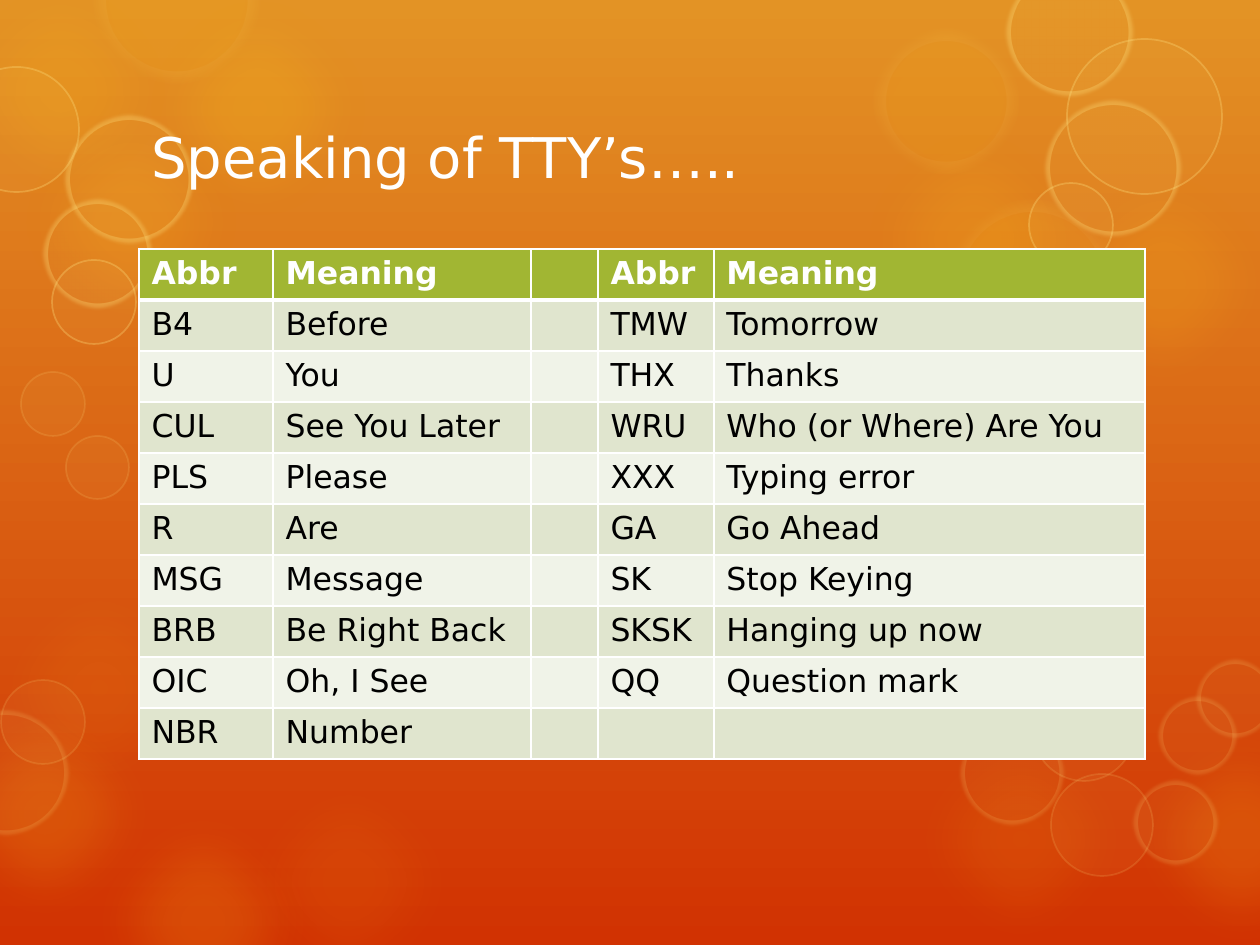
import pptx
import pptx.dml.color
import pptx.enum.shapes
import pptx.enum.text
import pptx.oxml
import pptx.oxml.ns
import pptx.util

SCALE = 914400 / 126
WIDTH, HEIGHT = 1260, 945
FONT = "DejaVu Sans"
AMBER, CREAM, YELLOW, WHITE = "FDC61B", "FEEBAE", "FFE281", "FFFFFF"
HEADER_FILL, BAND_FILLS = "A1B633", ("E0E5CE", "F0F3E8")
GLOW_SIZE = 263

GLOWS = [
    (-32, 557, 8), (72, 790, 16), (-70, -41, 14), (127, -23, 20),
    (0, 91, 15), (1033, 151, 15), (1110, 708, 16), (-86, 682, 16),
    (843, 108, 15), (890, 708, 10), (218, 751, 8),
]
HALOS = [(874, 29, 144), (948, 200, 168), (994, 282, 144), (94, -82, 165)]
RINGS = {
    (1, 15): [
        (1, 680, 84), (1051, 774, 102), (1033, 679, 102),
        (21, 372, 64), (66, 436, 63),
    ],
    (5, 15): [
        (-55, 711, 123), (961, 722, 102), (1134, 781, 83),
        (1159, 697, 77), (1197, 660, 77),
    ],
    (1, 30): [
        (-46, 67, 125), (52, 260, 84), (1067, 39, 155), (1029, 183, 84),
    ],
    (5, 30): [
        (66, 116, 126), (44, 200, 107), (1007, -30, 125), (1046, 101, 134),
    ],
}

COLUMNS = [134, 258, 67, 116, 431]
ROW_HEIGHT = 51
ROWS = [
    ("Abbr", "Meaning", "", "Abbr", "Meaning"),
    ("B4", "Before", "", "TMW", "Tomorrow"),
    ("U", "You", "", "THX", "Thanks"),
    ("CUL", "See You Later", "", "WRU", "Who (or Where) Are You"),
    ("PLS", "Please", "", "XXX", "Typing error"),
    ("R", "Are", "", "GA", "Go Ahead"),
    ("MSG", "Message", "", "SK", "Stop Keying"),
    ("BRB", "Be Right Back", "", "SKSK", "Hanging up now"),
    ("OIC", "Oh, I See", "", "QQ", "Question mark"),
    ("NBR", "Number", "", "", ""),
]


def px(length):
    return pptx.util.Emu(round(length * SCALE))


def rgb(value):
    return pptx.dml.color.RGBColor.from_string(value)


def write_text(frame, text, size=18, color="000000", bold=False):
    para = frame.paragraphs[0]
    para.font.size = pptx.util.Pt(size)
    if text:
        span = para.add_run()
        span.text = text
        span.font.name = FONT
        span.font.size = pptx.util.Pt(size)
        span.font.bold = bold
        span.font.color.rgb = rgb(color)


def paint_background(page):
    fill = page.background.fill
    fill.gradient()
    fill.gradient_angle = 270
    for stop, color in zip(fill.gradient_stops, ("E39325", "D13202")):
        stop.color.rgb = rgb(color)


def add_circle(page, left, top, size, color, alpha, line=None, soft=0):
    circle = page.shapes.add_shape(
        pptx.enum.shapes.MSO_SHAPE.OVAL, px(left), px(top), px(size), px(size))
    circle.shadow.inherit = False
    circle.fill.solid()
    circle.fill.fore_color.rgb = rgb(color)
    alphas = [alpha]
    if line:
        line_color, line_width, line_alpha = line
        circle.line.color.rgb = rgb(line_color)
        circle.line.width = pptx.util.Pt(line_width)
        alphas.append(line_alpha)
    else:
        circle.line.fill.background()
    properties = circle.element.spPr
    colors = list(properties.iter(pptx.oxml.ns.qn("a:srgbClr")))
    for node, percent in zip(colors, alphas):
        node.append(pptx.oxml.parse_xml(
            f'<a:alpha {pptx.oxml.ns.nsdecls("a")} val="{percent * 1000}"/>'))
    if soft:
        effects = properties.find(pptx.oxml.ns.qn("a:effectLst"))
        effects.append(pptx.oxml.parse_xml(
            f'<a:softEdge {pptx.oxml.ns.nsdecls("a")} rad="{px(soft)}"/>'))


def add_bubbles(page):
    for left, top, alpha in GLOWS:
        add_circle(page, left, top, GLOW_SIZE, AMBER, alpha, soft=50)
    for halo in HALOS:
        add_circle(page, *halo, AMBER, 10, (CREAM, 14, 6), soft=15)
    for (width, line_alpha), rings in RINGS.items():
        for ring in rings:
            add_circle(page, *ring, YELLOW, 5, (YELLOW, width, line_alpha),
                       soft=4 if width > 1 else 0)


def add_title(page):
    box = page.shapes.add_textbox(px(139), px(93), px(982), px(127))
    box.text_frame.word_wrap = True
    box.text_frame.vertical_anchor = pptx.enum.text.MSO_ANCHOR.MIDDLE
    write_text(box.text_frame, "Speaking of TTY’s…..", size=32, color=WHITE)


def set_borders(cell, top, bottom):
    properties = cell._tc.get_or_add_tcPr()
    widths = {"lnL": 1, "lnR": 1, "lnT": top, "lnB": bottom}
    for index, (side, width) in enumerate(widths.items()):
        properties.insert(index, pptx.oxml.parse_xml(
            f'<a:{side} {pptx.oxml.ns.nsdecls("a")} w="{pptx.util.Pt(width)}">'
            f'<a:solidFill><a:srgbClr val="{WHITE}"/></a:solidFill></a:{side}>'))


def add_abbreviations(page):
    table = page.shapes.add_table(
        len(ROWS), len(COLUMNS), px(139), px(249),
        px(sum(COLUMNS)), px(ROW_HEIGHT * len(ROWS))).table
    for column, width in zip(table.columns, COLUMNS):
        column.width = px(width)
    for row_index, texts in enumerate(ROWS):
        header = row_index == 0
        table.rows[row_index].height = px(ROW_HEIGHT)
        for column_index, text in enumerate(texts):
            cell = table.cell(row_index, column_index)
            cell.fill.solid()
            cell.fill.fore_color.rgb = rgb(
                HEADER_FILL if header else BAND_FILLS[(row_index - 1) % 2])
            set_borders(cell, top=3 if row_index == 1 else 1, bottom=3 if header else 1)
            write_text(cell.text_frame, text, bold=header,
                       color=WHITE if header else "000000")


def main():
    deck = pptx.Presentation()
    deck.slide_width, deck.slide_height = px(WIDTH), px(HEIGHT)
    page = deck.slides.add_slide(deck.slide_layouts[6])
    paint_background(page)
    add_bubbles(page)
    add_title(page)
    add_abbreviations(page)
    deck.save("out.pptx")


if __name__ == "__main__":
    main()
